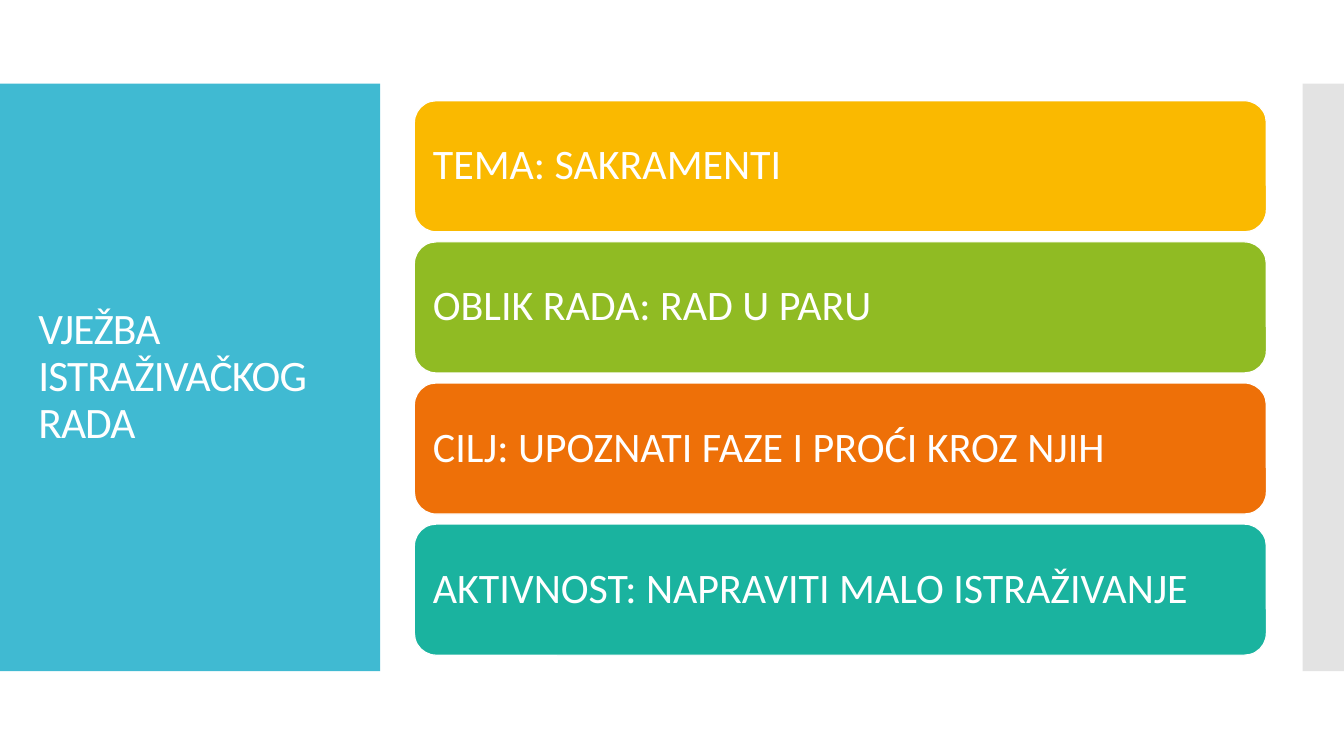
from dataclasses import dataclass

from lxml import etree
from pptx import Presentation
from pptx.dml.color import RGBColor
from pptx.enum.shapes import MSO_SHAPE
from pptx.enum.text import MSO_ANCHOR, MSO_AUTO_SIZE, PP_ALIGN
from pptx.oxml.ns import qn
from pptx.shapes.autoshape import Shape
from pptx.slide import Slide
from pptx.text.text import TextFrame
from pptx.util import Emu, Pt

RECT = MSO_SHAPE.RECTANGLE
ROUNDED = MSO_SHAPE.ROUNDED_RECTANGLE
MIDDLE = MSO_ANCHOR.MIDDLE
LEFT = PP_ALIGN.LEFT
NO_AUTOFIT = MSO_AUTO_SIZE.NONE

EMU_PER_PX = 9144
FONT = "Calibri"
COLORS = {
    "white": "FFFFFF",
    "blue": "40BAD2",
    "gray": "C8C8C8",
    "yellow": "FAB900",
    "green": "90BB23",
    "orange": "EE7008",
    "teal": "1AB39F",
}


@dataclass(frozen=True)
class Box:
    left: int
    top: int
    width: int
    height: int


@dataclass(frozen=True)
class Step:
    text: str
    color: str


TITLE_PANEL = Box(0, 83, 377, 583)
EDGE_PANEL = Box(1292, 83, 41, 583)
TITLE_BOX = Box(28, 123, 322, 503)
FIRST_STEP = Box(411, 100, 845, 130)
STEP_PITCH = 140
STEP_INSET = 12
STEPS = [
    Step("TEMA: SAKRAMENTI", "yellow"),
    Step("OBLIK RADA: RAD U PARU", "green"),
    Step("CILJ: UPOZNATI FAZE I PROĆI KROZ NJIH", "orange"),
    Step("AKTIVNOST: NAPRAVITI MALO ISTRAŽIVANJE", "teal"),
]


def px(length: int) -> Emu:
    return Emu(length * EMU_PER_PX)


def rgb(color: str) -> RGBColor:
    return RGBColor.from_string(COLORS[color])


def add_block(slide: Slide, kind: MSO_SHAPE, box: Box, color: str) -> Shape:
    block = slide.shapes.add_shape(
        kind, px(box.left), px(box.top), px(box.width), px(box.height)
    )
    block.shadow.inherit = False
    block.fill.solid()
    block.fill.fore_color.rgb = rgb(color)
    block.line.fill.background()
    return block


def set_opacity(block: Shape, percent: int) -> None:
    fill_color = block.element.spPr.find(qn("a:solidFill"))[0]
    etree.SubElement(fill_color, qn("a:alpha")).set("val", str(percent * 1000))


def write_text(frame: TextFrame, text: str, size: int, spacing: int = 0) -> None:
    frame.word_wrap = True
    frame.auto_size = NO_AUTOFIT
    frame.vertical_anchor = MIDDLE
    paragraph = frame.paragraphs[0]
    paragraph.alignment = LEFT
    paragraph.line_spacing = 0.9
    run = paragraph.add_run()
    run.text = text
    run.font.name = FONT
    run.font.size = Pt(size)
    run.font.color.rgb = rgb("white")
    if spacing:
        run._r.get_or_add_rPr().set("spc", str(spacing))


def add_title(slide: Slide) -> None:
    title = slide.shapes.title
    title.left, title.top = px(TITLE_BOX.left), px(TITLE_BOX.top)
    title.width, title.height = px(TITLE_BOX.width), px(TITLE_BOX.height)
    write_text(title.text_frame, "VJEŽBA ISTRAŽIVAČKOG RADA", 31, spacing=-60)
    title.element.getparent().append(title.element)


def add_step(slide: Slide, index: int, step: Step) -> None:
    box = Box(
        FIRST_STEP.left,
        FIRST_STEP.top + index * STEP_PITCH,
        FIRST_STEP.width,
        FIRST_STEP.height,
    )
    block = add_block(slide, ROUNDED, box, step.color)
    block.line.color.rgb = rgb("white")
    block.line.width = Pt(0.85)
    frame = block.text_frame
    frame.margin_left = frame.margin_right = px(STEP_INSET)
    frame.margin_top = frame.margin_bottom = px(STEP_INSET)
    write_text(frame, step.text, 30)


def main() -> None:
    presentation = Presentation()
    presentation.slide_width = px(1333)
    presentation.slide_height = px(750)
    title_only = presentation.slide_layouts.get_by_name("Title Only")
    slide = presentation.slides.add_slide(title_only)
    add_block(slide, RECT, TITLE_PANEL, "blue")
    set_opacity(add_block(slide, RECT, EDGE_PANEL, "gray"), 50)
    add_title(slide)
    for index, step in enumerate(STEPS):
        add_step(slide, index, step)
    presentation.save("out.pptx")


if __name__ == "__main__":
    main()
